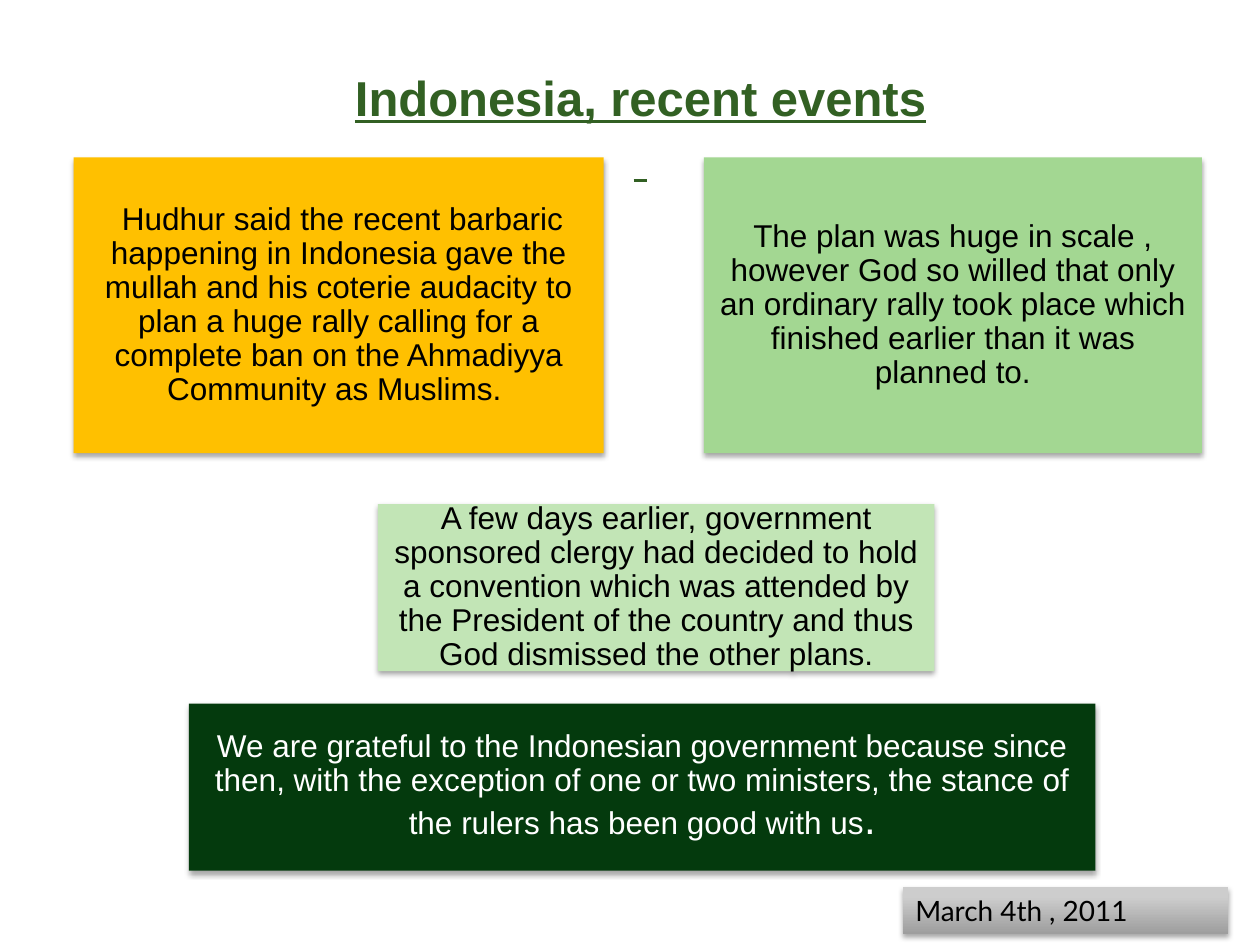
from dataclasses import dataclass

import lxml.etree
import pptx
import pptx.dml.color
import pptx.enum.dml
import pptx.enum.shapes
import pptx.enum.text
import pptx.oxml
import pptx.oxml.ns
import pptx.util

Pt = pptx.util.Pt
RGBColor = pptx.dml.color.RGBColor
Align = pptx.enum.text.PP_ALIGN
Anchor = pptx.enum.text.MSO_ANCHOR

BLACK = RGBColor(0x00, 0x00, 0x00)
WHITE = RGBColor(0xFF, 0xFF, 0xFF)
TITLE_GREEN = RGBColor(0x32, 0x60, 0x23)
AMBER = RGBColor(0xFF, 0xC0, 0x00)
LEAF = RGBColor(0xA3, 0xD7, 0x92)
PALE_LEAF = RGBColor(0xC2, 0xE5, 0xB6)
FOREST = RGBColor(0x04, 0x3A, 0x0D)
DARK_GREY = RGBColor(0x9E, 0x9E, 0x9E)
LIGHT_GREY = RGBColor(0xCD, 0xCD, 0xCD)

SHADOW = (
    f'<a:effectLst {pptx.oxml.ns.nsdecls("a")}>'
    '<a:outerShdw blurRad="39370" dist="22860" dir="5400000" rotWithShape="0">'
    '<a:srgbClr val="000000"><a:alpha val="35000"/></a:srgbClr>'
    "</a:outerShdw></a:effectLst>"
)


@dataclass(frozen=True)
class Span:
    text: str
    size: float = 18
    font: str = "Arial"
    color: RGBColor = BLACK


@dataclass(frozen=True)
class Card:
    left: float
    top: float
    width: float
    height: float
    fill: RGBColor
    spans: tuple[Span, ...]


CARDS = (
    Card(42, 90, 303, 169, AMBER, (
        Span(" ", 16, color=WHITE),
        Span("Hudhur said the recent barbaric happening in Indonesia gave the mullah "
             "and his coterie audacity to plan a huge rally calling for a complete ban "
             "on the Ahmadiyya Community as Muslims. "),
    )),
    Card(402.25, 90, 284.5, 169, LEAF, (
        Span("The plan was huge in scale , however God so willed that only an ordinary "
             "rally took place which finished earlier than it was planned to."),
    )),
    Card(108, 402, 518, 95.5, FOREST, (
        Span("We are grateful to the Indonesian government because since then, with the "
             "exception of one or two ministers, the stance of the rulers has been good "
             "with us", color=WHITE),
        Span(".", 24, color=WHITE),
    )),
    Card(216, 288, 318, 95.5, PALE_LEAF, (
        Span("A few days earlier, government sponsored clergy had decided to hold a "
             "convention which was attended by the President of the country and thus "
             "God dismissed the other plans."),
    )),
)


def add_span(para, span: Span):
    run = para.add_run()
    run.text = span.text
    run.font.size = Pt(span.size)
    run.font.name = span.font
    run.font.color.rgb = span.color
    return run


def set_insets(frame, horizontal: float, vertical: float) -> None:
    frame.margin_left = frame.margin_right = Pt(horizontal)
    frame.margin_top = frame.margin_bottom = Pt(vertical)


def add_title(page) -> None:
    box = page.shapes.add_textbox(Pt(36), Pt(36), Pt(660), Pt(72))
    frame = box.text_frame
    frame.word_wrap = True
    frame.vertical_anchor = Anchor.MIDDLE
    set_insets(frame, 0, 0)
    para = frame.paragraphs[0]
    para.alignment = Align.CENTER
    for index, text in enumerate(("Indonesia, recent events", " ")):
        if index:
            para.add_line_break()
        run = add_span(para, Span(text, 28, color=TITLE_GREEN))
        run.font.bold = True
        run.font.underline = True


def add_panel(page, left: float, top: float, width: float, height: float):
    panel = page.shapes.add_shape(
        pptx.enum.shapes.MSO_SHAPE.RECTANGLE, Pt(left), Pt(top), Pt(width), Pt(height)
    )
    panel.line.fill.background()
    panel._element.spPr.append(pptx.oxml.parse_xml(SHADOW))
    panel.text_frame.word_wrap = True
    return panel


def add_card(page, card: Card) -> None:
    panel = add_panel(page, card.left, card.top, card.width, card.height)
    panel.fill.solid()
    panel.fill.fore_color.rgb = card.fill
    frame = panel.text_frame
    frame.vertical_anchor = Anchor.MIDDLE
    set_insets(frame, 5, 5)
    para = frame.paragraphs[0]
    para.alignment = Align.CENTER
    para.line_spacing = 0.9
    for span in card.spans:
        add_span(para, span)


def add_date(page) -> None:
    panel = add_panel(page, 516, 507, 186, 26.6)
    panel.fill.gradient()
    panel.fill.gradient_angle = 90
    stops = panel.fill.gradient_stops
    for stop, position, color in zip(stops, (0, 0.8), (DARK_GREY, LIGHT_GREY)):
        stop.position = position
        stop.color.rgb = color
    frame = panel.text_frame
    frame.vertical_anchor = Anchor.TOP
    set_insets(frame, 7.2, 3.6)
    para = frame.paragraphs[0]
    para.alignment = Align.LEFT
    add_span(para, Span("March 4th , 2011", 16, "Lato"))


def main() -> None:
    deck = pptx.Presentation()
    deck.slide_width = Pt(720)
    deck.slide_height = Pt(540)
    page = deck.slides.add_slide(deck.slide_layouts[6])
    add_title(page)
    for card in CARDS:
        add_card(page, card)
    add_date(page)
    deck.save("out.pptx")


if __name__ == "__main__":
    main()
